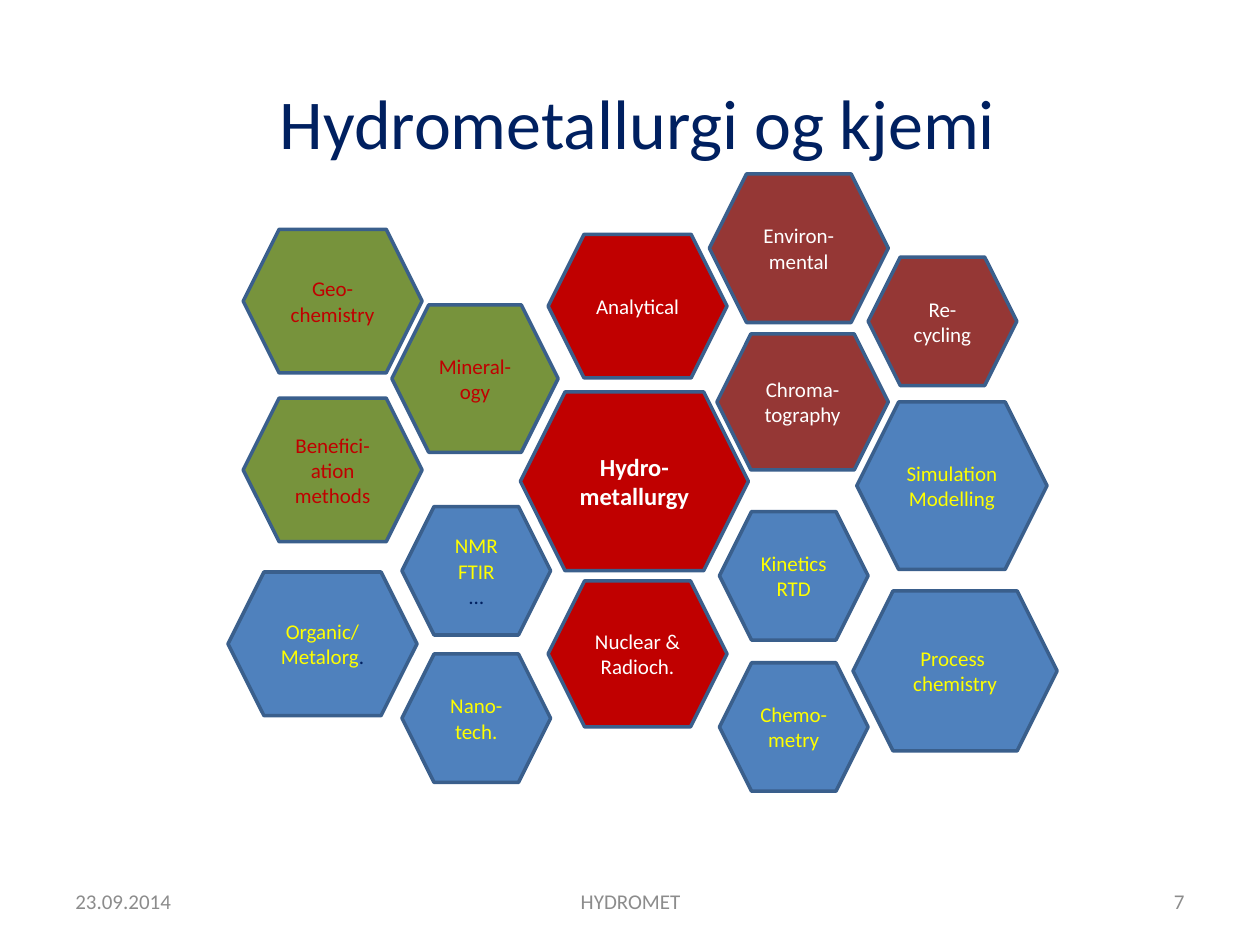
from pptx import Presentation
from pptx.dml.color import RGBColor
from pptx.enum.shapes import MSO_SHAPE
from pptx.enum.text import MSO_ANCHOR, PP_ALIGN
from pptx.util import Inches, Pt

HEXAGON = MSO_SHAPE.HEXAGON
MIDDLE = MSO_ANCHOR.MIDDLE
LEFT, CENTER, RIGHT = PP_ALIGN.LEFT, PP_ALIGN.CENTER, PP_ALIGN.RIGHT

FONT = "Calibri"
NAVY, WHITE, YELLOW, RED, GRAY = "002060", "FFFFFF", "FFFF00", "C00000", "8C8C8C"
OUTLINE = "3A5F8C"

TITLE = "Hydrometallurgi og kjemi"
TITLE_BOX = (0.56, 0.46, 9, 1.01)

GROUPS = {
    "core": {"fill": RED, "color": WHITE},
    "environment": {"fill": "953735", "color": WHITE},
    "minerals": {"fill": "77933C", "color": RED},
    "methods": {"fill": "4F81BD", "color": YELLOW},
}

MEDIUM = (1.42, 1.14)
SMALL = (1.18, 1.02)

HEXAGONS = [
    ("core", (4.13, 3.11), (1.81, 1.42), ["Hydro-metallurgy"]),
    ("core", (4.35, 1.86), MEDIUM, ["Analytical"]),
    ("environment", (5.69, 2.65), (1.36, 1.08), ["Chroma-tography"]),
    ("methods", (5.71, 4.06), SMALL, ["Kinetics", "RTD"]),
    ("methods", (6.8, 3.19), (1.51, 1.33), ["Simulation", "Modelling"]),
    ("minerals", (3.11, 2.42), (1.32, 1.17), ["Mineral-ogy"]),
    ("minerals", (1.93, 1.82), MEDIUM, ["Geo-chemistry"]),
    ("methods", (6.77, 4.69), (1.62, 1.27), ["Process ", "chemistry"]),
    ("methods", (1.81, 4.54), (1.5, 1.14), ["Organic/", ("Metalorg", ".")]),
    ("methods", (3.19, 5.19), SMALL, ["Nano-tech."]),
    ("methods", (5.71, 5.26), SMALL, ["Chemo-metry"]),
    ("core", (4.35, 4.61), (1.42, 1.16), ["Nuclear &", "Radioch."]),
    ("methods", (3.19, 4.02), SMALL, ["NMR", "FTIR", ("", "…")]),
    ("environment", (5.63, 1.38), (1.42, 1.18), ["Environ-mental"]),
    ("minerals", (1.93, 3.16), MEDIUM, ["Benefici-ation methods"]),
    ("environment", (6.89, 2.04), SMALL, ["Re-cycling"]),
]

FOOTERS = [
    ("23.09.2014", 0.5, 2.33, LEFT),
    ("HYDROMET", 3.42, 3.17, CENTER),
    ("7", 7.17, 2.33, RIGHT),
]
FOOTER_TOP, FOOTER_HEIGHT = 6.95, 0.4


def rgb(value):
    return RGBColor.from_string(value)


def write_text(shape, lines, size=12, color=NAVY, accent=NAVY, bold=False, align=CENTER):
    frame = shape.text_frame
    frame.word_wrap = True
    frame.vertical_anchor = MIDDLE
    for index, line in enumerate(lines):
        paragraph = frame.add_paragraph() if index else frame.paragraphs[0]
        paragraph.alignment = align
        parts = (line,) if isinstance(line, str) else line
        for text, part_color in zip(parts, (color, accent)):
            if not text:
                continue
            run = paragraph.add_run()
            run.text = text
            run.font.name = FONT
            run.font.size = Pt(size)
            run.font.bold = bold
            run.font.color.rgb = rgb(part_color)


def add_hexagon(slide, group, position, size, lines):
    shape = slide.shapes.add_shape(HEXAGON, *map(Inches, position + size))
    shape.shadow.inherit = False
    shape.fill.solid()
    shape.fill.fore_color.rgb = rgb(GROUPS[group]["fill"])
    shape.line.color.rgb = rgb(OUTLINE)
    shape.line.width = Pt(2)
    is_center = lines == ["Hydro-metallurgy"]
    write_text(shape, lines, size=14 if is_center else 12,
               color=GROUPS[group]["color"], bold=is_center)


def main():
    presentation = Presentation()
    presentation.slide_width = Inches(10)
    presentation.slide_height = Inches(7.5)
    slide = presentation.slides.add_slide(presentation.slide_layouts[5])

    title = slide.shapes.title
    title.left, title.top, title.width, title.height = map(Inches, TITLE_BOX)
    write_text(title, [TITLE], size=40)

    for hexagon in HEXAGONS:
        add_hexagon(slide, *hexagon)

    for text, left, width, align in FOOTERS:
        box = slide.shapes.add_textbox(*map(Inches, (left, FOOTER_TOP, width, FOOTER_HEIGHT)))
        write_text(box, [text], color=GRAY, align=align)

    presentation.save("out.pptx")


if __name__ == "__main__":
    main()
